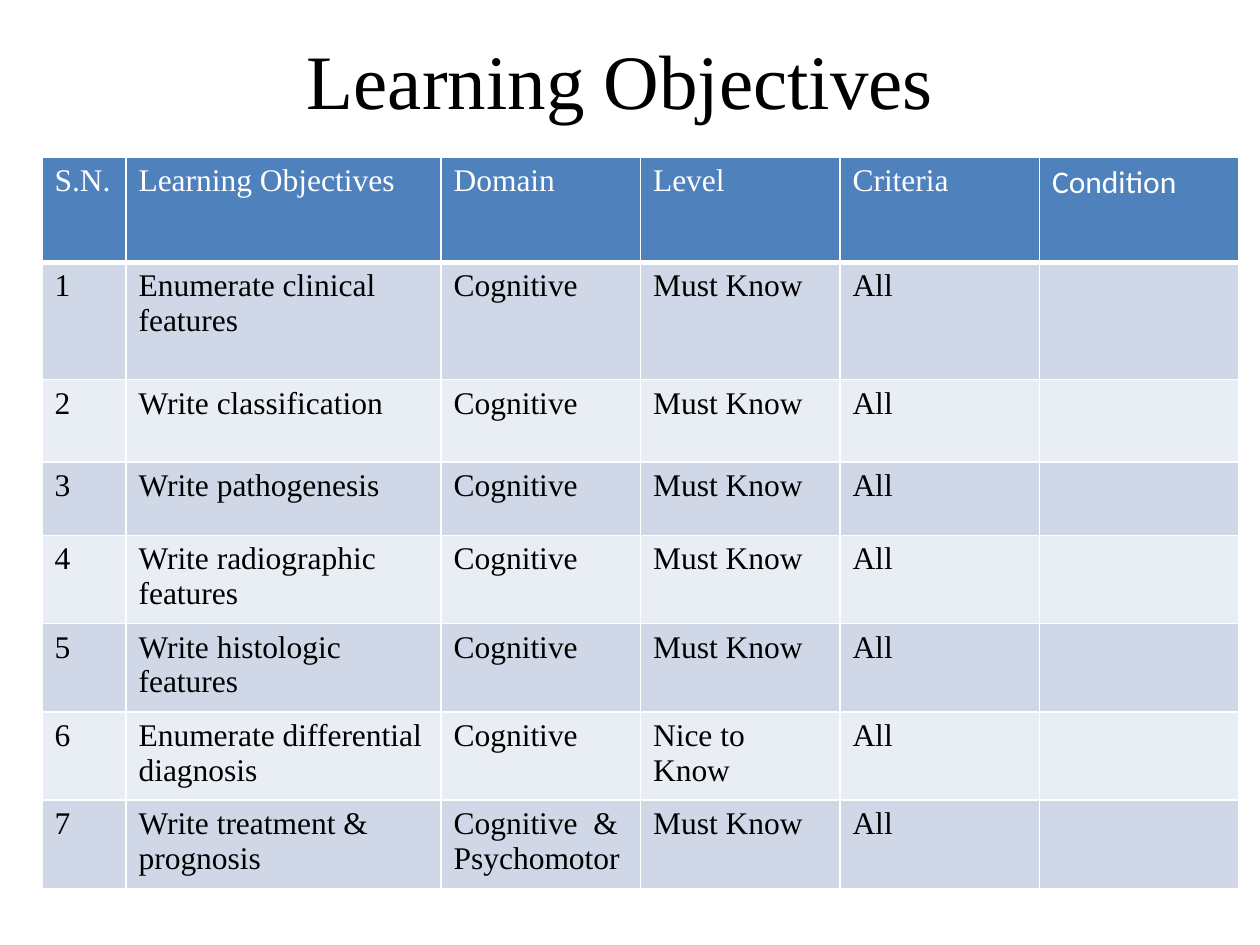
from dataclasses import dataclass

from lxml.etree import fromstring
from pptx import Presentation
from pptx.dml.color import RGBColor as Rgb
from pptx.enum.text import MSO_ANCHOR as Anchor, PP_ALIGN as Align
from pptx.oxml.ns import nsdecls
from pptx.util import Pt


@dataclass(frozen=True)
class Theme:
    serif: str = "Times New Roman"
    sans: str = "Calibri"
    title: int = 44
    body: int = 18
    ink: str = "000000"
    paper: str = "FFFFFF"
    head: str = "4F81BD"
    bands: tuple = ("D0D8E8", "E9EDF4")


THEME = Theme()
HEADS = ["S.N.", "Learning Objectives", "Domain", "Level", "Criteria", "Condition"]
GOALS = [
    ("Enumerate clinical features", "Cognitive", "Must Know", 67),
    ("Write classification", "Cognitive", "Must Know", 47),
    ("Write pathogenesis", "Cognitive", "Must Know", 42),
    ("Write radiographic features", "Cognitive", "Must Know", 47),
    ("Write histologic features", "Cognitive", "Must Know", 47),
    ("Enumerate differential diagnosis", "Cognitive", "Nice to Know", 47),
    ("Write treatment & prognosis", "Cognitive  & Psychomotor", "Must Know", 47),
]
WIDTHS = [48, 180] + [114] * 4


def write(frame, text, size, color, face):
    run = frame.paragraphs[0].add_run()
    run.text = text
    look = {"size": Pt(size), "name": face}
    for key, value in look.items():
        setattr(run.font, key, value)
    run.font.color.rgb = Rgb.from_string(color)


def add_title(slide, left, top, width, height):
    frame = slide.shapes.add_textbox(Pt(left), Pt(top), Pt(width), Pt(height)).text_frame
    look = {"word_wrap": True, "vertical_anchor": Anchor.MIDDLE}
    for key, value in look.items():
        setattr(frame, key, value)
    frame.paragraphs[0].alignment = Align.CENTER
    write(frame, "Learning Objectives ", THEME.title, THEME.ink, THEME.serif)


def style_cell(cell, fill, base):
    cell.fill.solid()
    cell.fill.fore_color.rgb = Rgb.from_string(fill)
    props = cell._tc.get_or_add_tcPr()
    edges = {"L": 1, "R": 1, "T": 1, "B": base}
    for spot, (side, size) in enumerate(edges.items()):
        props.insert(spot, fromstring(
            f'<a:ln{side} {nsdecls("a")} w="{Pt(size)}"><a:solidFill>'
            f'<a:srgbClr val="{THEME.paper}"/></a:solidFill></a:ln{side}>'))


def add_goals(slide, left, top, width):
    rows = [HEADS] + [[str(num), goal, domain, level, "All", ""]
                      for num, (goal, domain, level, _) in enumerate(GOALS, 1)]
    heights = [60] + [goal[-1] for goal in GOALS]
    table = slide.shapes.add_table(len(rows), len(HEADS), Pt(left), Pt(top),
                                   Pt(width), Pt(sum(heights))).table
    for col, size in zip(table.columns, WIDTHS):
        col.width = Pt(size)
    for row, size in zip(table.rows, heights):
        row.height = Pt(size)
    for y, row in enumerate(rows):
        fill = THEME.bands[(y - 1) % 2] if y else THEME.head
        color = THEME.ink if y else THEME.paper
        for x, text in enumerate(row):
            cell = table.cell(y, x)
            style_cell(cell, fill, 1 if y else 3)
            if text:
                face = THEME.sans if text == "Condition" else THEME.serif
                write(cell.text_frame, text, THEME.body, color, face)


def main():
    deck = Presentation()
    deck.slide_width, deck.slide_height = Pt(720), Pt(540)
    slide = deck.slides.add_slide(deck.slide_layouts[6])
    add_title(slide, 36, 0, 648, 90)
    add_goals(slide, 24, 90, sum(WIDTHS))
    deck.save("out.pptx")


if __name__ == "__main__":
    main()
